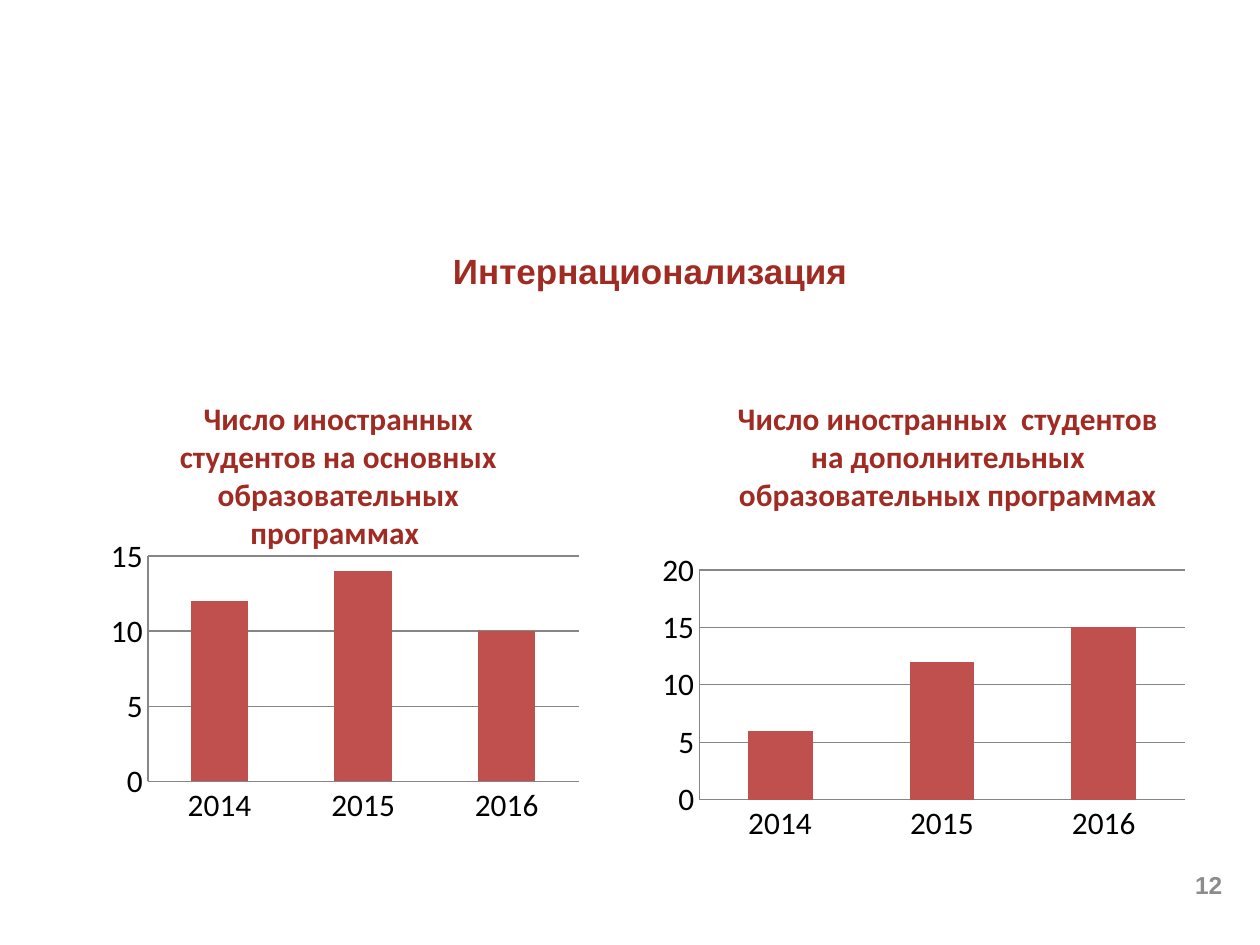
"""Build a slide comparing foreign student numbers in two kinds of programmes."""
import lxml.etree
import pptx
import pptx.chart.data
import pptx.dml.color
import pptx.enum.chart
import pptx.enum.text
import pptx.oxml.ns
import pptx.util

Pt = pptx.util.Pt
RGBColor = pptx.dml.color.RGBColor
qn = pptx.oxml.ns.qn
ALIGN = pptx.enum.text.PP_ALIGN
ANCHOR = pptx.enum.text.MSO_ANCHOR

DARK_RED = RGBColor(0x9F, 0x2B, 0x22)
BAR_RED = RGBColor(0xC0, 0x50, 0x4D)
BLACK = RGBColor(0, 0, 0)
LINE_GRAY = RGBColor(0x86, 0x86, 0x86)
NUMBER_GRAY = RGBColor(0x8C, 0x8C, 0x8C)

HEADING = "Интернационализация"
PAGE_NUMBER = "12"
YEARS = ("2014", "2015", "2016")
CHART_TOP, CHART_HEIGHT, CHART_FONT_SIZE = 223.2, 262.8, 17.9
CHARTS = [
    {
        "title": "Число иностранных студентов на основных образовательных программах ",
        "values": (12, 14, 10),
        "maximum": 15,
        "left": 42.5,
        "width": 300.2,
        "title_position": {"x": 0.19, "y": 0},
        "plot": {"x": 0.14, "y": 0.36, "w": 0.82, "h": 0.49},
    },
    {
        "title": "Число иностранных  студентов на дополнительных образовательных программах ",
        "values": (6, 12, 15),
        "maximum": 20,
        "left": 371.5,
        "width": 311.8,
        "title_position": {"x": 0.15, "y": 0},
        "plot": {"x": 0.09, "y": 0.39, "w": 0.89, "h": 0.5},
    },
]


def format_font(font, name, size, color, bold=False):
    font.name = name
    font.size = Pt(size)
    font.bold = bold
    font.color.rgb = color


def place(shape, left, top, width, height):
    shape.left, shape.top = Pt(left), Pt(top)
    shape.width, shape.height = Pt(width), Pt(height)


def write_line(shape, text, size, color, alignment, anchor):
    frame = shape.text_frame
    frame.word_wrap = True
    frame.vertical_anchor = anchor
    paragraph = frame.paragraphs[0]
    paragraph.alignment = alignment
    run = paragraph.add_run()
    run.text = text
    format_font(run.font, "Arial", size, color, bold=True)


def set_layout(parent, index, settings):
    for old_layout in parent.findall(qn("c:layout")):
        parent.remove(old_layout)
    layout = lxml.etree.Element(qn("c:layout"))
    parent.insert(index, layout)
    manual = lxml.etree.SubElement(layout, qn("c:manualLayout"))
    for name, value in settings.items():
        lxml.etree.SubElement(manual, qn(f"c:{name}")).set("val", str(value))


def add_student_chart(slide, content):
    data = pptx.chart.data.CategoryChartData()
    data.categories = YEARS
    data.add_series("Series 1", content["values"])
    chart = slide.shapes.add_chart(
        pptx.enum.chart.XL_CHART_TYPE.COLUMN_CLUSTERED,
        Pt(content["left"]), Pt(CHART_TOP), Pt(content["width"]), Pt(CHART_HEIGHT), data,
    ).chart
    format_font(chart.font, "Calibri", CHART_FONT_SIZE, BLACK)
    chart.has_legend = False
    chart.has_title = True
    title_run = chart.chart_title.text_frame.paragraphs[0].add_run()
    title_run.text = content["title"]
    format_font(title_run.font, "Calibri", CHART_FONT_SIZE, DARK_RED, bold=True)

    plot = chart.plots[0]
    plot.gap_width = 150
    plot.vary_by_categories = False
    fill = plot.series[0].format.fill
    fill.solid()
    fill.fore_color.rgb = BAR_RED

    value_axis = chart.value_axis
    value_axis.minimum_scale = 0
    value_axis.maximum_scale = content["maximum"]
    value_axis.major_unit = 5
    value_axis.has_major_gridlines = True
    for axis in (chart.category_axis, value_axis):
        axis.major_tick_mark = pptx.enum.chart.XL_TICK_MARK.NONE
        axis.minor_tick_mark = pptx.enum.chart.XL_TICK_MARK.NONE
    for part in (chart.category_axis, value_axis, value_axis.major_gridlines):
        part.format.line.color.rgb = LINE_GRAY
        part.format.line.width = Pt(0.75)

    chart_element = chart._chartSpace.chart
    edges = {"xMode": "edge", "yMode": "edge"}
    set_layout(chart_element.find(qn("c:title")), 1, {**edges, **content["title_position"]})
    set_layout(chart_element.plotArea, 0, {"layoutTarget": "inner", **edges, **content["plot"]})


def main():
    presentation = pptx.Presentation()
    presentation.slide_width, presentation.slide_height = Pt(720), Pt(540)
    slide = presentation.slides.add_slide(presentation.slide_layouts[5])

    title = slide.shapes.title
    place(title, 60, 106.6, 623, 60)
    write_line(title, HEADING, 20, DARK_RED, ALIGN.CENTER, ANCHOR.TOP)
    title.text_frame.margin_top = Pt(36)
    title.text_frame.margin_bottom = 0

    for content in CHARTS:
        add_student_chart(slide, content)

    number_box = slide.shapes.add_textbox(Pt(537.8), Pt(491), Pt(167.8), Pt(28.8))
    write_line(number_box, PAGE_NUMBER, 14, NUMBER_GRAY, ALIGN.RIGHT, ANCHOR.MIDDLE)

    presentation.save("out.pptx")


if __name__ == "__main__":
    main()
